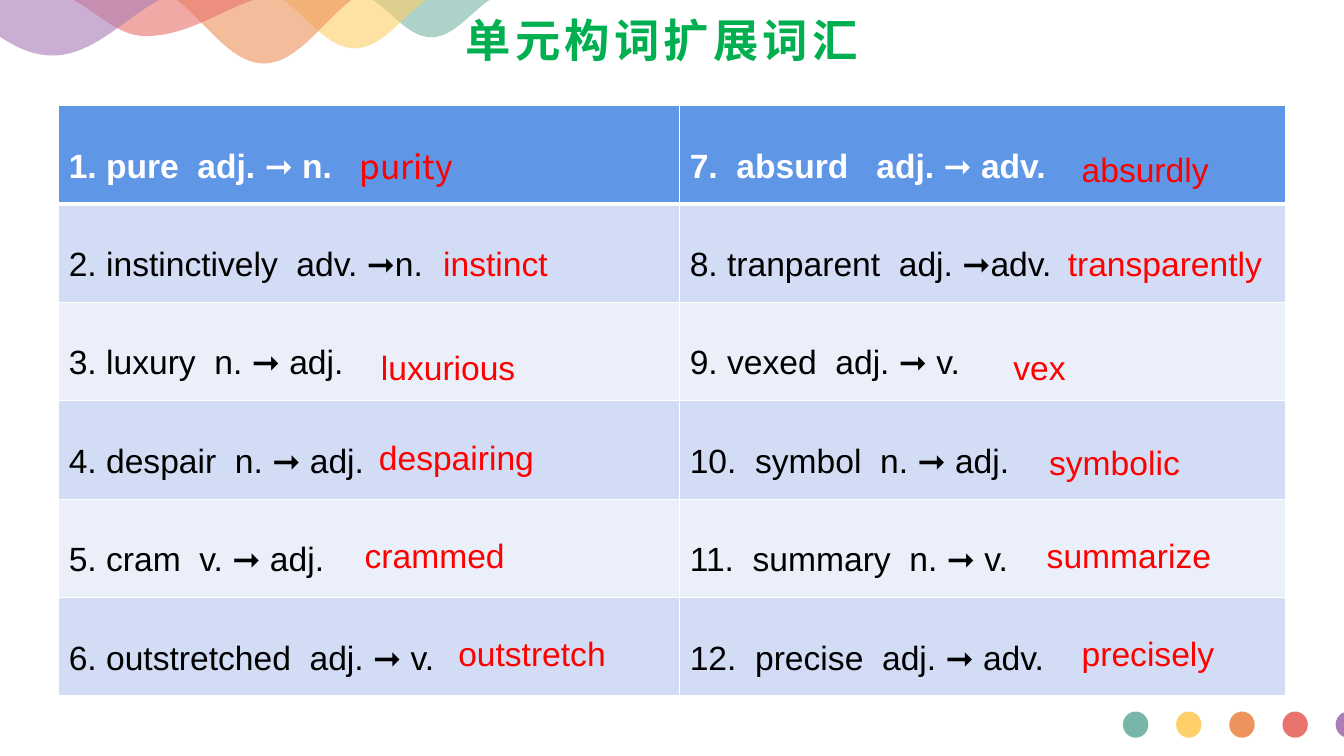
"""Build a word-formation slide with a table, its answers and wave ornaments."""
from lxml.etree import SubElement
from pptx import Presentation
from pptx.dml.color import RGBColor
from pptx.enum.shapes import MSO_SHAPE
from pptx.enum.text import MSO_ANCHOR, PP_ALIGN
from pptx.oxml.ns import qn
from pptx.util import Cm, Pt

TITLE = "单元构词扩展词汇"
ROWS = [
    ("1. pure  adj. ➞ n.", "7.  absurd   adj. ➞ adv."),
    ("2. instinctively  adv. ➞n.", "8. tranparent  adj. ➞adv."),
    ("3. luxury  n. ➞ adj.", "9. vexed  adj. ➞ v."),
    ("4. despair  n. ➞ adj.", "10.  symbol  n. ➞ adj."),
    ("5. cram  v. ➞ adj.", "11.  summary  n. ➞ v."),
    ("6. outstretched  adj. ➞ v.", "12.  precise  adj. ➞ adv."),
]
ANSWERS = [
    ("purity", 8.81, 3.56, 5.16, "Noto Sans CJK SC"),
    ("instinct", 10.92, 6.0, 3.56, "Arial"),
    ("luxurious", 9.35, 8.61, 5.99, "Arial"),
    ("despairing", 9.3, 10.89, 5.61, "Arial"),
    ("crammed", 8.94, 13.36, 5.54, "Arial"),
    ("outstretch", 11.3, 15.82, 4.37, "Arial"),
    ("absurdly", 27.01, 3.63, 4.93, "Arial"),
    ("transparently", 26.66, 6.0, 5.89, "Arial"),
    ("vex", 25.29, 8.61, 2.6, "Arial"),
    ("symbolic", 26.19, 11.0, 4.67, "Arial"),
    ("summarize", 26.13, 13.36, 5.08, "Arial"),
    ("precisely", 27.01, 15.82, 5.15, "Arial"),
]
WAVES = [
    ("78B6A9", 9.4, 10.87, 12.34, 0.94),
    ("FDD069", 7.14, 8.94, 10.74, 1.22),
    ("ED935C", 4.45, 6.65, 8.86, 1.6),
    ("E9746E", 1.85, 3.66, 6.38, 0.91),
    ("AB7DB6", -1.37, 1.32, 4.01, 1.4),
]
COLS = (15.65, 15.27)
ROW = 2.48
HEAD, BANDS = "6096E6", ("EAEFFA", "D2DDF5")


def paint(part, tone):
    part.fill.solid()
    part.fill.fore_color.rgb = RGBColor.from_string(tone)


def write(frame, text, size=24, font="Arial", tone="000000", bold=False, align=PP_ALIGN.LEFT):
    para = frame.paragraphs[0]
    para.alignment = align
    run = para.add_run()
    run.text = text
    run.font.size = Pt(size)
    run.font.name = font
    run.font.bold = bold
    run.font.color.rgb = RGBColor.from_string(tone)
    return run


def edge(cell, width):
    line = cell._tc.get_or_add_tcPr()
    rule = line.makeelement(qn("a:lnB"), {"w": str(Pt(width))})
    line.insert(0, rule)
    fill = SubElement(rule, qn("a:solidFill"))
    SubElement(fill, qn("a:srgbClr")).set("val", "FFFFFF")


def bend(shape):
    lines = list(shape._element.iter(qn("a:lnTo")))
    for i in range(0, 6, 3):
        curve = lines[i].makeelement(qn("a:cubicBezTo"), {})
        lines[i].addprevious(curve)
        for line in lines[i:i + 3]:
            curve.append(line[0])
    for line in lines:
        line.getparent().remove(line)


def wave(shapes, tone, left, mid, right, deep):
    fall, rise = right - mid, mid - left
    knots = [
        (right - 0.33 * fall, 0.34 * deep), (right - 0.62 * fall, deep), (mid, deep),
        (mid - 0.38 * rise, deep), (mid - 0.67 * rise, 0.34 * deep), (left, 0),
    ]
    pen = shapes.build_freeform(Cm(right), Cm(0))
    pen.add_line_segments([(Cm(x), Cm(y)) for x, y in knots], close=True)
    shape = pen.convert_to_shape()
    bend(shape)
    shape.shadow.inherit = False
    paint(shape, tone)
    shape.line.fill.background()
    color = shape.fill._xPr.find(qn("a:solidFill"))[0]
    SubElement(color, qn("a:alpha")).set("val", "61000")


def main():
    deck = Presentation()
    deck.slide_width, deck.slide_height = Cm(33.87), Cm(19.05)
    slide = deck.slides.add_slide(deck.slide_layouts[5])
    shapes = slide.shapes

    title = shapes.title
    title.left, title.top, title.width, title.height = Cm(1.44), Cm(0), Cm(30.48), Cm(1.96)
    title.text_frame.vertical_anchor = MSO_ANCHOR.MIDDLE
    run = write(title.text_frame, TITLE, size=32.4, tone="00B050", bold=True, align=PP_ALIGN.CENTER)
    run.font._element.set("spc", "300")

    frame = shapes.add_table(len(ROWS), len(COLS), Cm(1.48), Cm(2.66), Cm(sum(COLS)), Cm(ROW * len(ROWS)))
    table = frame.table
    for col, wide in zip(table.columns, COLS):
        col.width = Cm(wide)
    for r, words in enumerate(ROWS):
        table.rows[r].height = Cm(ROW)
        for c, text in enumerate(words):
            cell = table.cell(r, c)
            cell.margin_top = Cm(1.06)
            paint(cell, BANDS[r % 2] if r else HEAD)
            edge(cell, 1 if r else 3)
            write(cell.text_frame, text, tone="000000" if r else "FFFFFF", bold=r == 0)

    for text, left, top, wide, font in ANSWERS:
        box = shapes.add_textbox(Cm(left), Cm(top), Cm(wide), Cm(1.27))
        box.text_frame.word_wrap = True
        write(box.text_frame, text, font=font, tone="FF0000")

    for i, item in enumerate(WAVES):
        dot = shapes.add_shape(MSO_SHAPE.OVAL, Cm(28.3 + 1.34 * i), Cm(17.93), Cm(0.64), Cm(0.66))
        dot.shadow.inherit = False
        paint(dot, item[0])
        dot.line.fill.background()

    for item in WAVES:
        wave(shapes, *item)

    deck.save("out.pptx")


if __name__ == "__main__":
    main()
